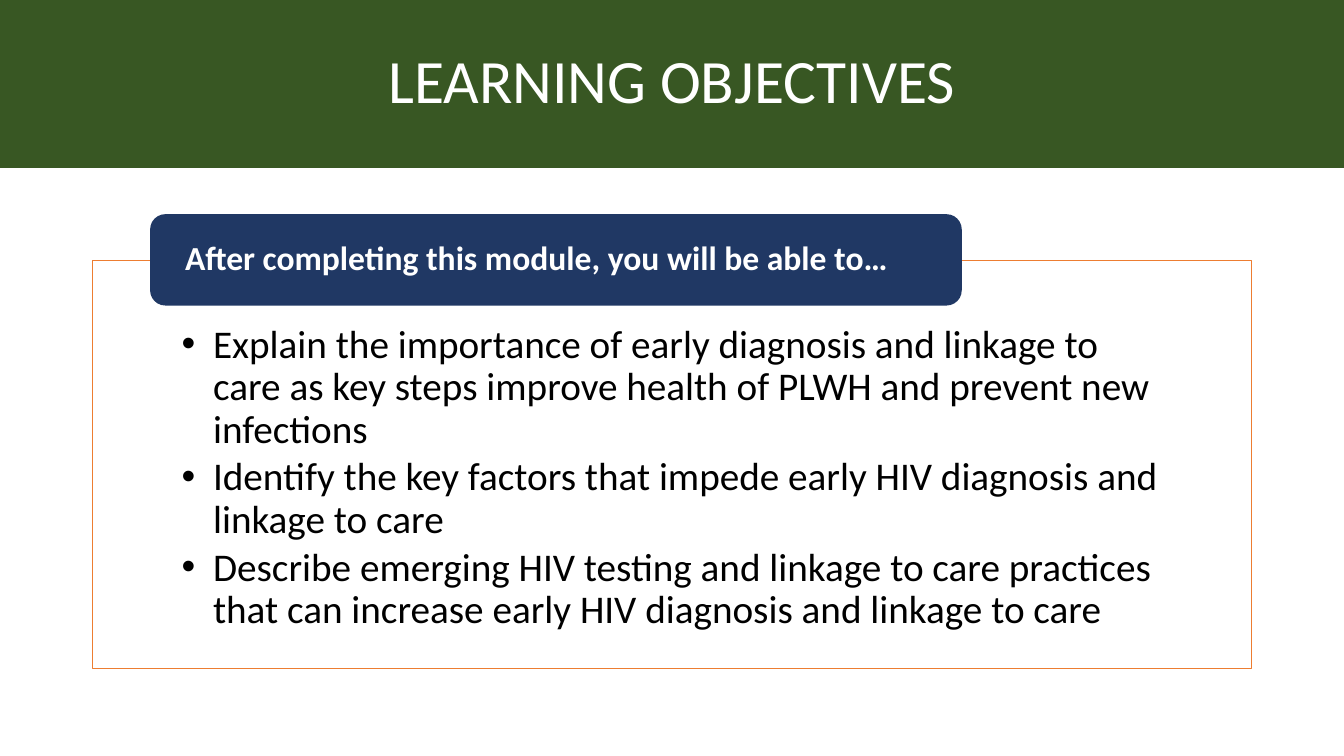
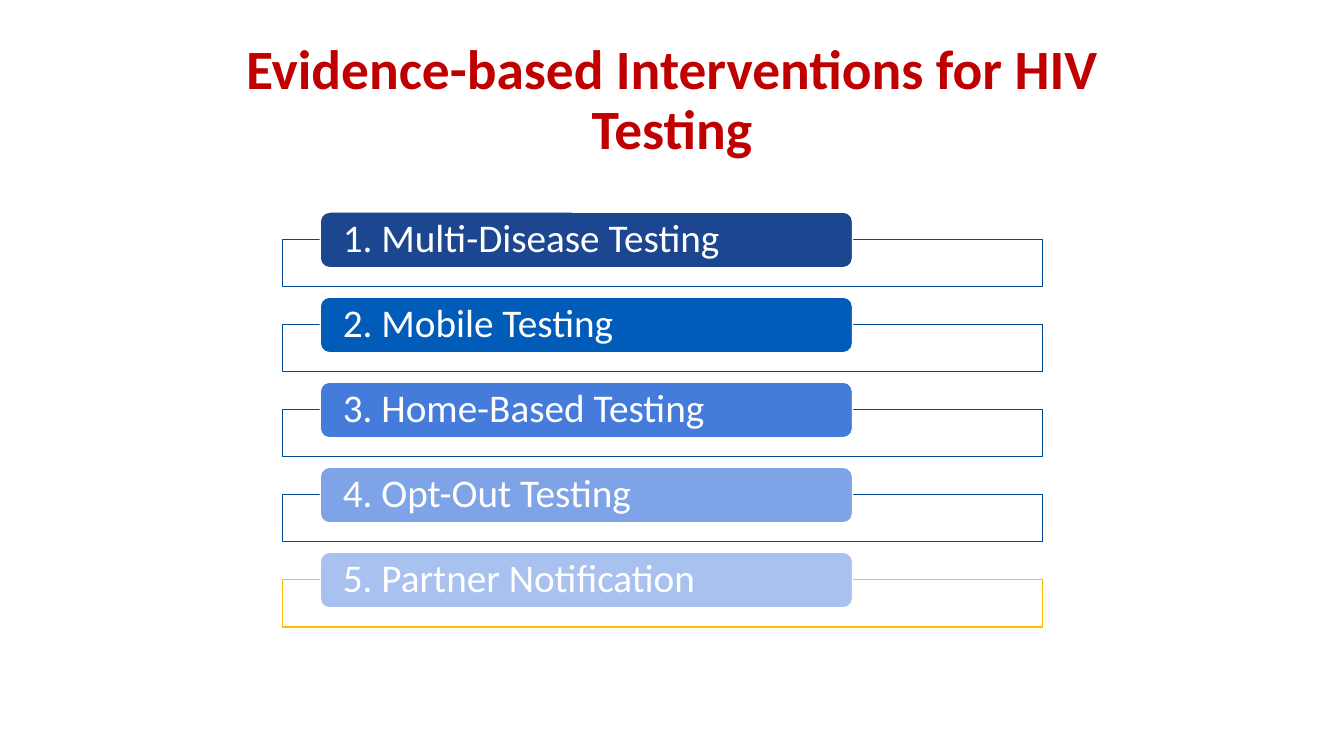
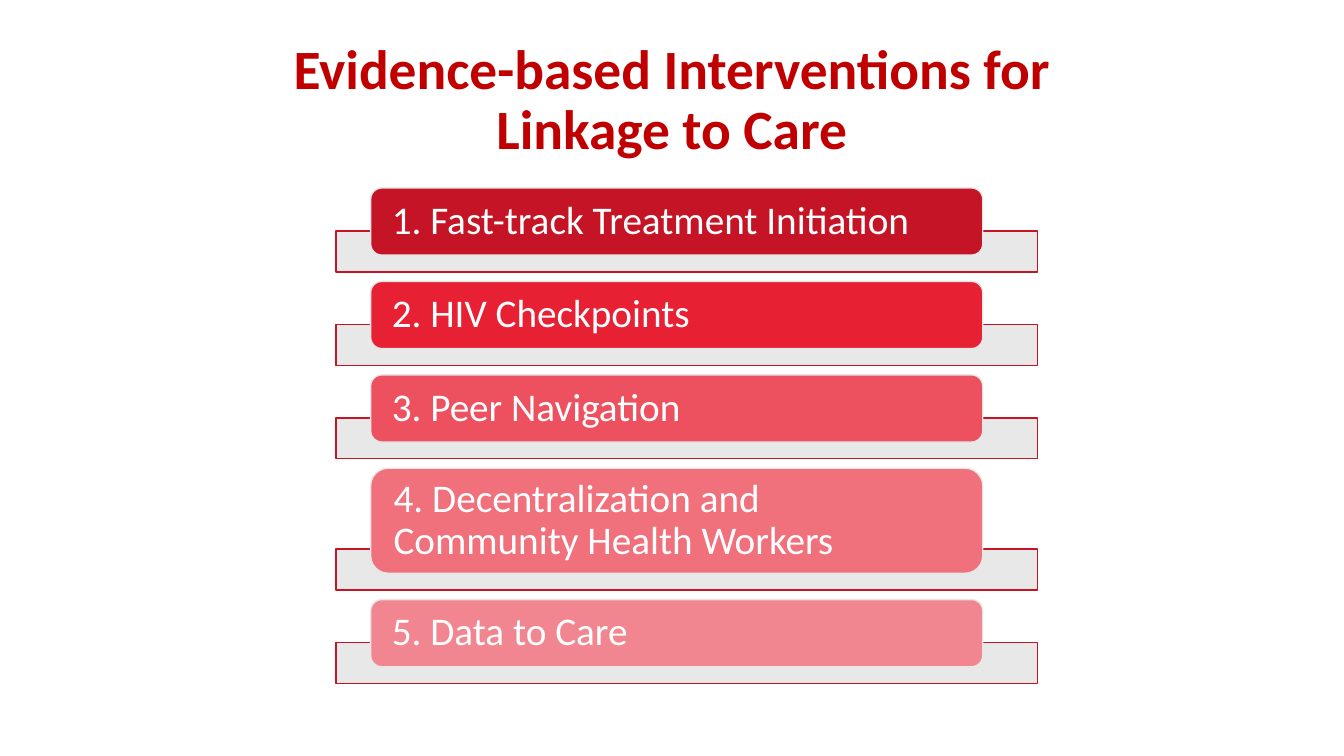
from dataclasses import dataclass

from lxml import etree
from pptx import Presentation
from pptx.dml.color import RGBColor
from pptx.enum.shapes import MSO_SHAPE
from pptx.enum.text import MSO_ANCHOR, PP_ALIGN
from pptx.oxml.ns import qn
from pptx.util import Pt

RECT, ROUND = MSO_SHAPE.RECTANGLE, MSO_SHAPE.ROUNDED_RECTANGLE
TOP, MIDDLE = MSO_ANCHOR.TOP, MSO_ANCHOR.MIDDLE
LEFT, CENTER = PP_ALIGN.LEFT, PP_ALIGN.CENTER
EMU_PER_PX = 9525


@dataclass(frozen=True)
class Theme:
    """Colours, font and type sizes shared by the slides."""
    font: str = "Calibri"
    white: str = "FFFFFF"
    black: str = "000000"
    grey: str = "E7E6E6"
    band: str = "385723"
    navy: str = "203864"
    orange: str = "ED7D31"
    heading: str = "C00000"
    blue_line: str = "004990"
    gold_line: str = "FFC000"
    red_line: str = "C41425"
    blues: tuple = ("1C4690", "005CB8", "457BDB", "7EA3E6", "A8C1EE")
    reds: tuple = ("C41425", "E82033", "ED5160", "F0707C", "F28690")
    band_size: float = 44
    heading_size: float = 39.6
    body_size: float = 28
    lead_size: float = 24
    spacing: float = 0.9
    panel_alpha: int = 90


@dataclass(frozen=True)
class ListStyle:
    """Measures and panel colours of one list of pills."""
    panel_h: int
    overlap: int
    gap: int
    pill_x: int
    pill_w: int
    line_h: int
    pad_h: int
    inset: int
    panel_fill: str
    edge: str


T = Theme()
TITLE_BOX = (208, 47, 864, 100)


def px(n):
    """Turn px into EMU."""
    return n * EMU_PER_PX


def add_box(slide, kind, box, fill=None, line=None, width=1, alpha=None):
    """Add a flat shape with the given fill and outline."""
    sp = slide.shapes.add_shape(kind, *map(px, box))
    sp.shadow.inherit = False
    if fill:
        sp.fill.solid()
        sp.fill.fore_color.rgb = RGBColor.from_string(fill)
    else:
        sp.fill.background()
    if alpha:
        clr = sp.fill._xPr.find(qn("a:solidFill"))[0]
        etree.SubElement(clr, qn("a:alpha")).set("val", str(alpha * 1000))
    if line:
        sp.line.color.rgb = RGBColor.from_string(line)
        sp.line.width = Pt(width)
    else:
        sp.line.fill.background()
    return sp


def set_text(sp, paragraphs, size, color, bold=False, align=LEFT,
             anchor=MIDDLE, insets=(10, 5, 10, 5)):
    """Fill a shape with paragraphs, each a list of lines, and return them."""
    tf = sp.text_frame
    tf.word_wrap = True
    tf.vertical_anchor = anchor
    (tf.margin_left, tf.margin_top,
     tf.margin_right, tf.margin_bottom) = map(px, insets)
    for i, lines in enumerate(paragraphs):
        p = tf.add_paragraph() if i else tf.paragraphs[0]
        p.alignment = align
        p.line_spacing = T.spacing
        for j, line in enumerate(lines):
            if j:
                p.add_line_break()
            r = p.add_run()
            r.text = line
            r.font.name = T.font
            r.font.size = Pt(size)
            r.font.bold = bold
            r.font.color.rgb = RGBColor.from_string(color)
    return tf.paragraphs


def add_bullet(p, indent):
    """Give a paragraph a round bullet with a hanging indent."""
    pPr = p._p.get_or_add_pPr()
    pPr.set("marL", str(px(indent)))
    pPr.set("indent", str(-px(indent)))
    etree.SubElement(pPr, qn("a:buFont")).set("typeface", "Arial")
    etree.SubElement(pPr, qn("a:buChar")).set("char", "•")


def add_band(slide, box, text):
    """Add the filled title band."""
    sp = add_box(slide, RECT, box, T.band)
    set_text(sp, [[text]], T.band_size, T.white, align=CENTER)


def add_heading(slide, box, text):
    """Add the bold centred heading."""
    sp = slide.shapes.add_textbox(*map(px, box))
    set_text(sp, [[text]], T.heading_size, T.heading, bold=True, align=CENTER)


def add_pill(slide, box, fill, lines, inset, size, line=None, bold=False):
    """Add a rounded label with left-aligned text."""
    sp = add_box(slide, ROUND, box, fill, line)
    set_text(sp, [lines], size, T.white, bold, insets=(inset, 0, inset, 0))


def add_objectives(slide, box, lead, items):
    """Add an outlined panel of bullets with a lead label on its top edge."""
    x, y, _, _ = box
    sp = add_box(slide, RECT, box, T.white, T.orange, 0.5, T.panel_alpha)
    for p in set_text(sp, [[item] for item in items], T.body_size, T.black,
                      anchor=TOP, insets=(85, 61, 85, 21)):
        p.space_after = Pt(4)
        add_bullet(p, 30)
    add_pill(slide, (x + 55, y - 44, 773, 87), T.navy, [lead], 29,
             T.lead_size, bold=True)


def add_pill_list(slide, x, y, w, style, items, fills, last_edge=None):
    """Stack labels downwards, each overlapping the panel behind it."""
    for i, (lines, fill) in enumerate(zip(items, fills)):
        h = style.pad_h + style.line_h * len(lines)
        panel_y = y + h - style.overlap
        is_last = i == len(items) - 1
        edge = last_edge if is_last and last_edge else style.edge
        add_box(slide, RECT, (x, panel_y, w, style.panel_h),
                style.panel_fill, edge, alpha=T.panel_alpha)
        add_pill(slide, (x + style.pill_x, y, style.pill_w, h), fill, lines,
                 style.inset, T.body_size, style.panel_fill)
        y = panel_y + style.panel_h + style.gap


def build_objectives(slide):
    """Build the learning objectives slide."""
    add_band(slide, (0, 0, 1280, 160), "LEARNING OBJECTIVES")
    add_objectives(
        slide, (88, 248, 1104, 389),
        "After completing this module, you will be able to…",
        ["Explain the importance of early diagnosis and linkage to care as "
         "key steps improve health of PLWH and prevent new infections",
         "Identify the key factors that impede early HIV diagnosis and "
         "linkage to care",
         "Describe emerging HIV testing and linkage to care practices that "
         "can increase early HIV diagnosis and linkage to care"])


def build_testing(slide):
    """Build the HIV testing slide."""
    add_heading(slide, TITLE_BOX,
                "Evidence-based Interventions for HIV Testing")
    style = ListStyle(panel_h=45, overlap=27, gap=10, pill_x=36, pill_w=507,
                      line_h=36, pad_h=17, inset=19, panel_fill=T.white,
                      edge=T.blue_line)
    items = [["1. Multi-Disease Testing"], ["2. Mobile Testing"],
             ["3. Home-Based Testing"], ["4. Opt-Out Testing"],
             ["5. Partner Notification"]]
    add_pill_list(slide, 269, 202, 724, style, items, T.blues, T.gold_line)


def build_linkage(slide):
    """Build the linkage to care slide."""
    add_heading(slide, TITLE_BOX,
                "Evidence-based Interventions for Linkage to Care")
    style = ListStyle(panel_h=39, overlap=23, gap=9, pill_x=33, pill_w=583,
                      line_h=36, pad_h=28, inset=17, panel_fill=T.grey,
                      edge=T.red_line)
    items = [["1. Fast-track Treatment Initiation"], ["2. HIV Checkpoints"],
             ["3. Peer Navigation"],
             ["4. Decentralization and", "Community Health Workers"],
             ["5. Data to Care"]]
    add_pill_list(slide, 320, 179, 668, style, items, T.reds)


def main():
    """Build and save the presentation."""
    prs = Presentation()
    prs.slide_width, prs.slide_height = px(1280), px(720)
    for build in (build_objectives, build_testing, build_linkage):
        build(prs.slides.add_slide(prs.slide_layouts[6]))
    prs.save("out.pptx")


if __name__ == "__main__":
    main()
